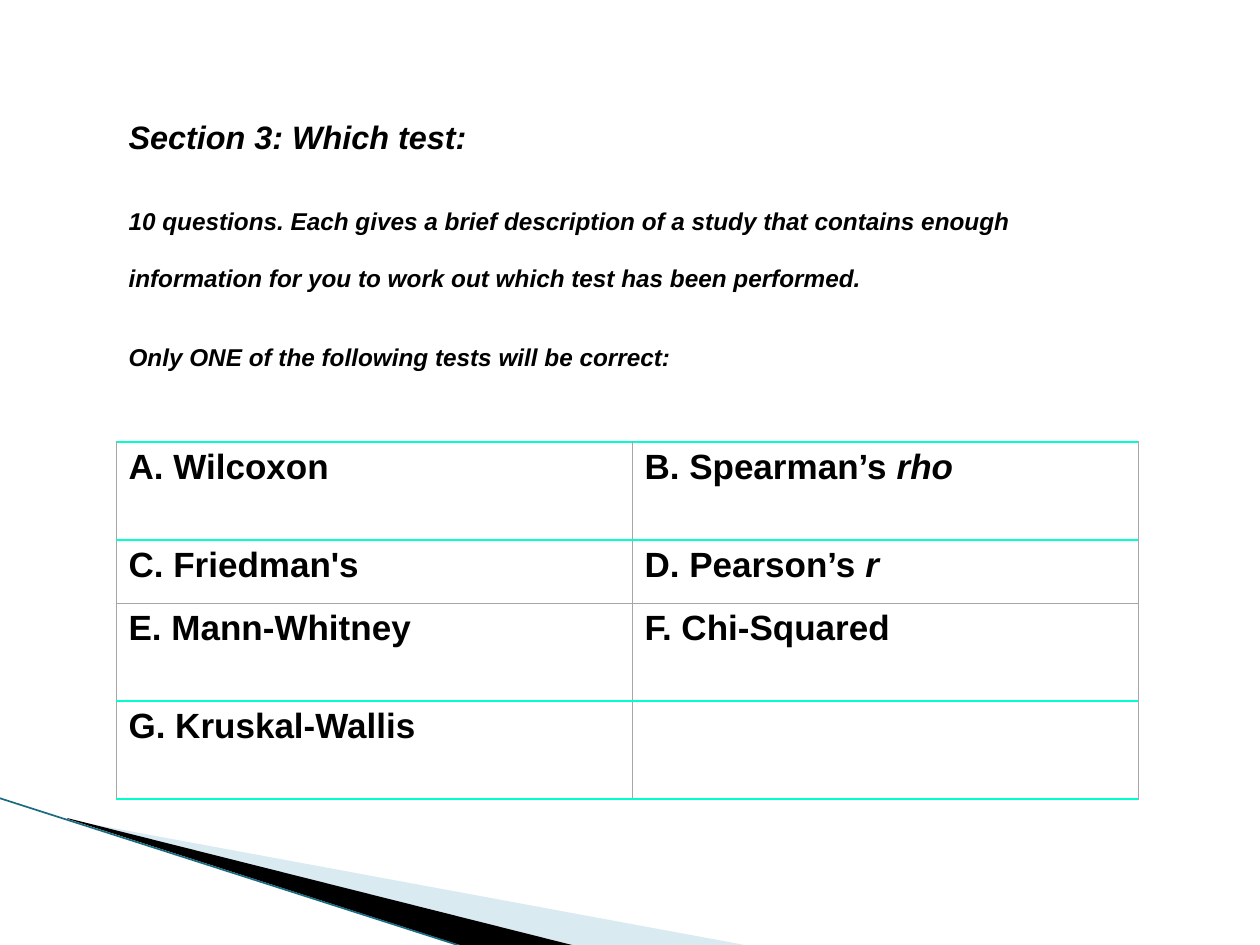
from lxml import etree
from pptx import Presentation
from pptx.dml.color import RGBColor
from pptx.enum import shapes, text
from pptx.oxml import ns
from pptx.util import Pt

PX = 914400 / 126
BLACK = RGBColor(0, 0, 0)
PALE_BLUE = RGBColor(0xA0, 0xCB, 0xDC)
TEAL = RGBColor(0x1A, 0x6B, 0x80)
TURQUOISE = RGBColor(0x00, 0xFF, 0xCC)
GREY = RGBColor(0xA6, 0xA6, 0xA6)

# text, size, line height, space before (points)
INTRO = [
    ("Section 3: Which test:", 18.5, 44, 0),
    ("10 questions. Each gives a brief description of a study that contains "
     "enough information for you to work out which test has been performed.",
     13.9, 33, 12),
    ("Only ONE of the following tests will be correct:", 13.9, 33, 12),
]
INTRO_AREA = (116, 73, 1036, 335)

# each cell: upright words, italic words
TESTS = [
    [("A. Wilcoxon", ""), ("B. Spearman’s ", "rho")],
    [("C. Friedman's", ""), ("D. Pearson’s", " r")],
    [("E. Mann-Whitney", ""), ("F. Chi-Squared", "")],
    [("G. Kruskal-Wallis", ""), ("", "")],
]
TABLE_LEFT, TABLE_TOP = 116, 442
COLUMNS = [516, 506]
ROWS = [98, 63, 98, 98]
RULES = [TURQUOISE, TURQUOISE, GREY, TURQUOISE, TURQUOISE]  # top to bottom

# corner points, colour, opacity in percent
WEDGES = [
    ([(69, 820), (750, 946), (575, 946), (69, 819)], PALE_BLUE, 40),
    ([(67, 818), (576, 946), (469, 948), (68, 819)], BLACK, 100),
]
EDGE = (-1, 798, 467, 948)


def px(*lengths):
    return [round(length * PX) for length in lengths]


def add_span(para, words, size, italic):
    span = para.add_run()
    span.text = words
    font = span.font
    font.name, font.size = "Arial", Pt(size)
    font.bold, font.italic = True, italic
    font.color.rgb = BLACK


def add_wedge(page, points, color, opacity):
    outline = page.shapes.build_freeform(*points[0], scale=PX)
    outline.add_line_segments(points[1:], close=True)
    wedge = outline.convert_to_shape()
    wedge.shadow.inherit = False
    wedge.fill.solid()
    wedge.fill.fore_color.rgb = color
    wedge.line.fill.background()
    if opacity < 100:
        tint = wedge.fill._xPr.find(".//" + ns.qn("a:srgbClr"))
        etree.SubElement(tint, ns.qn("a:alpha"), val=str(opacity * 1000))


def add_edge(page):
    edge = page.shapes.add_connector(shapes.MSO_CONNECTOR.STRAIGHT, *px(*EDGE))
    edge.line.color.rgb = TEAL
    edge.line.width = Pt(0.95)
    etree.SubElement(edge._element.spPr, ns.qn("a:effectLst"))


def add_intro(page):
    box = page.shapes.title
    box.left, box.top, box.width, box.height = px(*INTRO_AREA)
    frame = box.text_frame
    frame.word_wrap = True
    frame.auto_size = text.MSO_AUTO_SIZE.NONE
    frame.vertical_anchor = text.MSO_ANCHOR.TOP
    for index, (words, size, height, before) in enumerate(INTRO):
        para = frame.add_paragraph() if index else frame.paragraphs[0]
        para.alignment = text.PP_ALIGN.LEFT
        para.line_spacing = Pt(height)
        para.space_before = Pt(before)
        add_span(para, words, size, True)


def set_border(cell, side, color):
    width = 1 if color == TURQUOISE else 0.5
    border = etree.SubElement(cell._tc.get_or_add_tcPr(), ns.qn("a:ln" + side),
                              w=str(Pt(width)))
    fill = etree.SubElement(border, ns.qn("a:solidFill"))
    etree.SubElement(fill, ns.qn("a:srgbClr"), val=str(color))


def add_tests(page):
    area = px(TABLE_LEFT, TABLE_TOP, sum(COLUMNS), sum(ROWS))
    table = page.shapes.add_table(len(ROWS), len(COLUMNS), *area).table
    table.first_row = table.horz_banding = False
    for column, width in zip(table.columns, px(*COLUMNS)):
        column.width = width
    for row, height in zip(table.rows, px(*ROWS)):
        row.height = height
    for r, tests in enumerate(TESTS):
        for c, (upright, italic) in enumerate(tests):
            cell = table.cell(r, c)
            for side, color in (("L", GREY), ("R", GREY),
                                ("T", RULES[r]), ("B", RULES[r + 1])):
                set_border(cell, side, color)
            cell.fill.background()
            para = cell.text_frame.paragraphs[0]
            for words, slanted in ((upright, False), (italic, True)):
                if words:
                    add_span(para, words, 20, slanted)


def main():
    deck = Presentation()
    deck.slide_width, deck.slide_height = px(1260, 945)
    page = deck.slides.add_slide(deck.slide_layouts.get_by_name("Title Only"))
    for wedge in WEDGES:
        add_wedge(page, *wedge)
    add_edge(page)
    add_intro(page)
    add_tests(page)
    deck.save("out.pptx")


if __name__ == "__main__":
    main()
